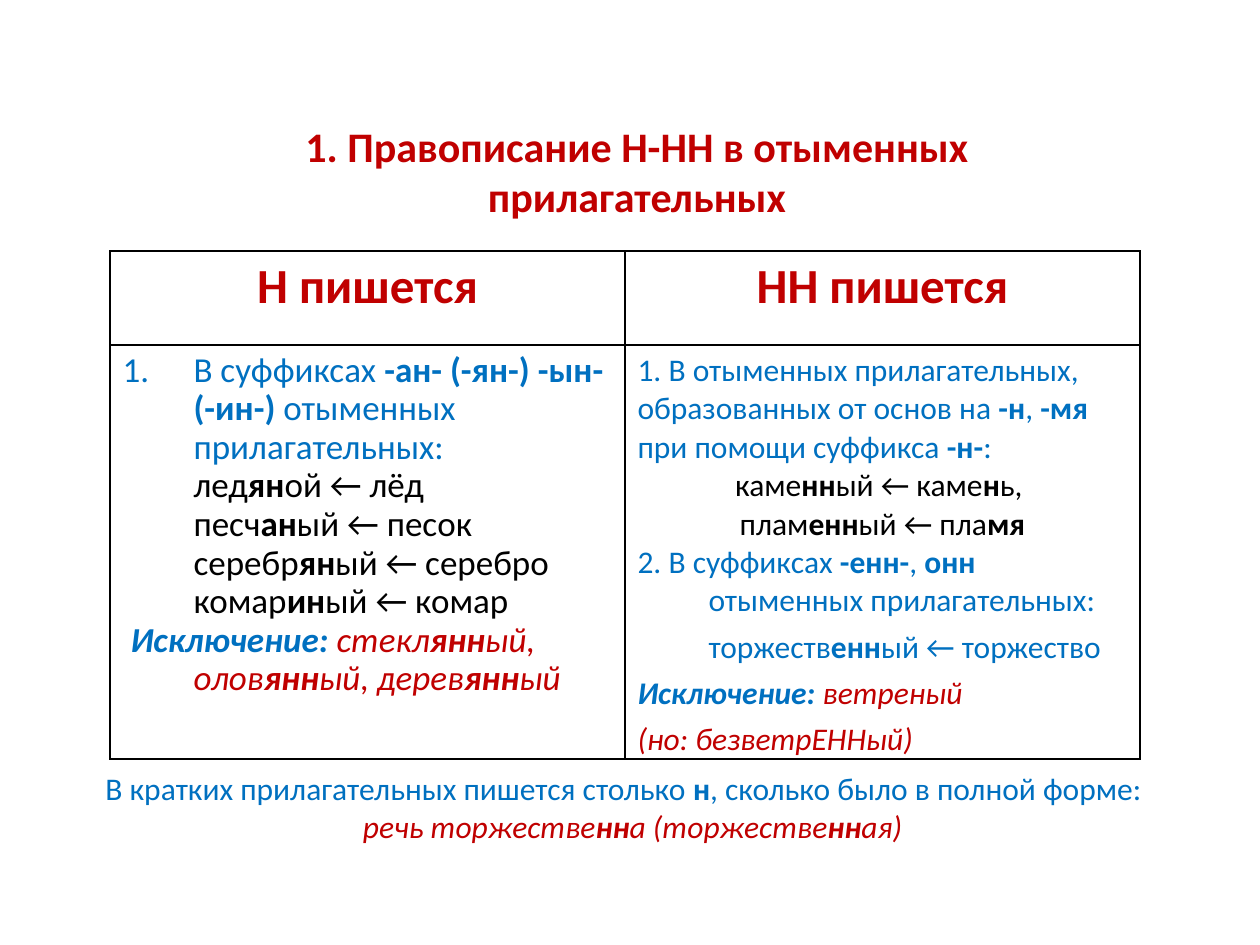
from pptx import Presentation
from pptx.dml.color import RGBColor
from pptx.enum.text import MSO_ANCHOR, MSO_AUTO_SIZE, PP_ALIGN
from pptx.oxml.ns import qn
from pptx.util import Emu, Pt
from lxml.etree import SubElement

RED = RGBColor(0xC0, 0x00, 0x00)
BLUE = RGBColor(0x00, 0x70, 0xC0)
BLACK = RGBColor(0x00, 0x00, 0x00)
HANG = 71


def px(n):
    return Emu(round(n * 914400 / 126))


def para(*runs, **style):
    """Pair runs of (text, colour, italic) with paragraph settings."""
    return runs, style


class Deck:
    def __init__(self):
        self.prs = Presentation()
        self.prs.slide_width, self.prs.slide_height = px(1260), px(945)
        self.slide = self.prs.slides.add_slide(self.prs.slide_layouts[5])

    def place(self, shape, *box):
        for name, n in zip(("left", "top", "width", "height"), box):
            setattr(shape, name, px(n))

    def fill(self, frame, paras, size):
        """Fill a text frame; asterisks in the text switch bold on and off."""
        for i, (runs, style) in enumerate(paras):
            p = frame.add_paragraph() if i else frame.paragraphs[0]
            left, first = style.get("left", 0), style.get("first", 0)
            ppr = p._p.get_or_add_pPr()
            ppr.set("marL", str(px(left)))
            ppr.set("indent", str(px(first)))
            if style.get("number"):
                SubElement(ppr, qn("a:buAutoNum"), type="arabicPeriod")
            look = {"alignment": style.get("align", PP_ALIGN.LEFT),
                    "line_spacing": style.get("line", 1.0),
                    "space_before": Pt(0)}
            for name, value in look.items():
                setattr(p, name, value)
            for text, color, italic in runs:
                for k, part in enumerate(text.split("*")):
                    if part:
                        self.run(p, part, color, size=Pt(size),
                                 bold=k % 2 == 1, italic=italic)

    def run(self, p, text, color, **look):
        run = p.add_run()
        run.text = text
        for name, value in {"name": "Calibri", **look}.items():
            setattr(run.font, name, value)
        run.font.color.rgb = color

    def title(self, paras, size, *box):
        shape = self.slide.shapes.title
        self.place(shape, *box)
        frame = shape.text_frame
        frame.auto_size = MSO_AUTO_SIZE.NONE
        frame.vertical_anchor = MSO_ANCHOR.MIDDLE
        self.fill(frame, paras, size)

    def text(self, paras, size, *box):
        frame = self.slide.shapes.add_textbox(*map(px, box)).text_frame
        frame.word_wrap = True
        self.fill(frame, paras, size)

    def table(self, rows, heights, left, top, width):
        """Draw a ruled table; each cell is a pair of size and paragraphs."""
        table = self.slide.shapes.add_table(
            len(rows), len(rows[0]), px(left), px(top),
            px(width), px(sum(heights))).table
        table.first_row = table.horz_banding = False
        for r, (row, high) in enumerate(zip(rows, heights)):
            table.rows[r].height = px(high)
            for c, (size, paras) in enumerate(row):
                cell = table.cell(r, c)
                cell.margin_bottom = 0
                self.border(cell)
                cell.fill.background()
                self.fill(cell.text_frame, paras, size)

    def border(self, cell):
        tcpr = cell._tc.get_or_add_tcPr()
        for side in "LRTB":
            line = SubElement(tcpr, qn(f"a:ln{side}"), w=str(Pt(1)))
            fill = SubElement(line, qn("a:solidFill"))
            SubElement(fill, qn("a:srgbClr"), val=str(BLACK))


def main():
    deck = Deck()
    mid = {"align": PP_ALIGN.CENTER}
    hang = {"left": HANG, "first": -HANG}
    tight = {"left": HANG, "line": 0.9}
    loose = {"line": 1.2}

    deck.title([para(("*1. Правописание Н-НН в отыменных прилагательных*",
                      RED, False), **mid)], 24, 163, 113, 948, 115)

    heads = [(28, [para((f"*{word} пишется*", RED, False), **mid)])
             for word in ("Н", "НН")]
    pairs = ("лед*ян*ой ← лёд", "песч*ан*ый ← песок",
             "серебр*ян*ый ← серебро", "комар*ин*ый ← комар")
    single = [
        para(("В суффиксах *-ан- (-ян-) -ын- (-ин-) *отыменных прилагательных:",
              BLUE, False), **tight, first=-HANG, number=True),
        *[para((pair, BLACK, False), **tight) for pair in pairs],
        para(("*Исключение: *", BLUE, True),
             ("стекл*янн*ый, олов*янн*ый, дерев*янн*ый", RED, True),
             **tight, first=-63),
    ]
    double = [
        *[para((text, BLUE, False), **hang) for text in (
            "1. В отыменных прилагательных,",
            "образованных от основ на *-н*, *-мя*",
            "при помощи суффикса *-н-*:")],
        *[para((text, BLACK, False), **hang, **mid) for text in (
            "каме*нн*ый ← каме*н*ь, ", "плам*енн*ый ← пла*мя*")],
        para(("2. В суффиксах *-енн-*, *онн *отыменных прилагательных:",
              BLUE, False), **hang),
        para(("торжеств*енн*ый ← торжество", BLUE, False),
             left=HANG, **loose),
        para(("*Исключение: *", BLUE, True), ("ветреный", RED, True),
             **hang, **loose),
        para(("(но: безветрЕННый)", RED, True), **hang, **loose),
    ]
    deck.table([heads, [(20, single), (18, double)]], [94, 414],
               110, 251, 1030)

    deck.text([
        para(("В кратких прилагательных пишется столько *н*, "
              "сколько было в полной форме:", BLUE, False)),
        para(("речь торжестве*нн*а (торжестве*нн*ая)", RED, True), **mid),
    ], 18, 93, 763, 1079, 89)
    deck.prs.save("out.pptx")


if __name__ == "__main__":
    main()
